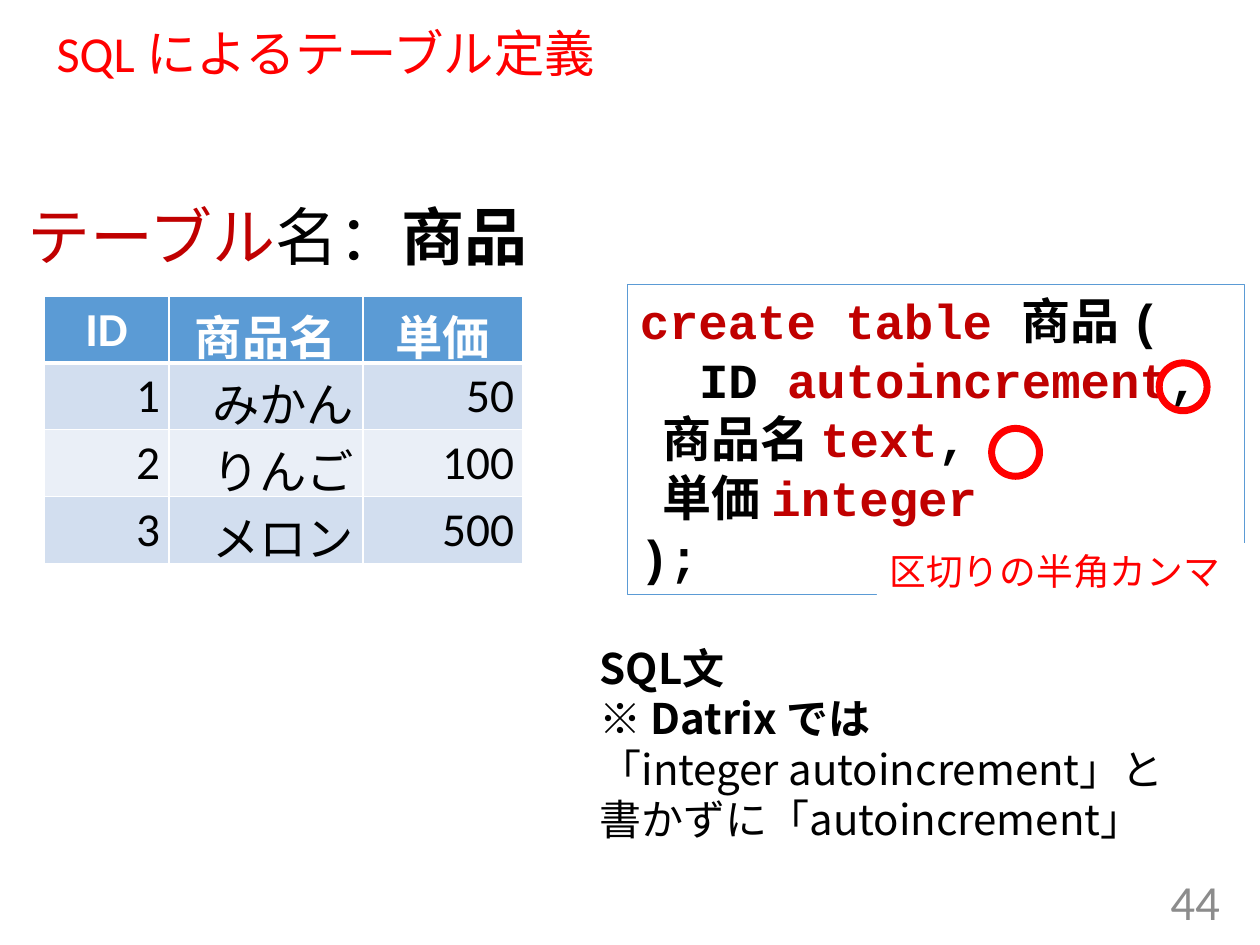
import pptx
import pptx.dml.color
import pptx.enum.shapes
import pptx.enum.text
import pptx.oxml
import pptx.oxml.ns
import pptx.util
from pptx.util import Inches

ALIGN = pptx.enum.text.PP_ALIGN
ANCHOR = pptx.enum.text.MSO_ANCHOR
SHAPE = pptx.enum.shapes.MSO_SHAPE
RED, KEYWORD, BLACK, WHITE = "FF0000", "C00000", "000000", "FFFFFF"
BLUE, BAND, PALE, GREY = "5B9BD5", "D2DEEF", "EAEFF7", "8C8C8C"
GOTHIC = "Noto Sans CJK JP"


def rgb(value):
    return pptx.dml.color.RGBColor.from_string(value)


class Deck:
    def __init__(self, width, height):
        self.prs = pptx.Presentation()
        self.prs.slide_width, self.prs.slide_height = Inches(width), Inches(height)
        self.s = self.prs.slides.add_slide(self.prs.slide_layouts[6])

    def run(self, p, text, size, font="Calibri", color=BLACK, bold=False):
        r = p.add_run()
        r.text = text
        r.font.size, r.font.name, r.font.bold = pptx.util.Pt(size), font, bold
        r.font.color.rgb = rgb(color)
        latin = r._r.rPr.find(pptx.oxml.ns.qn("a:latin"))
        ns = pptx.oxml.ns.nsdecls("a")
        latin.addnext(pptx.oxml.parse_xml(f'<a:ea {ns} typeface="{GOTHIC}"/>'))

    def add_lines(self, tf, lines, size, font="Calibri", align=ALIGN.LEFT, spacing=None,
                  indents=None, anchor=ANCHOR.TOP, wrap=True):
        """Fill a text frame with lines, each a list of (text, colour, bold) runs."""
        tf.word_wrap, tf.vertical_anchor = wrap, anchor
        for i, line in enumerate(lines):
            p = tf.add_paragraph() if i else tf.paragraphs[0]
            p.alignment = align
            if spacing:
                p.line_spacing = spacing
            if indents:
                pPr = p._p.get_or_add_pPr()
                pPr.set("marL", str(Inches(indents[i])))
                pPr.set("indent", "0")
            for text, color, bold in line:
                self.run(p, text, size, font, color, bold)

    def text(self, box, lines, size, **style):
        sp = self.s.shapes.add_textbox(*map(Inches, box))
        self.add_lines(sp.text_frame, lines, size, **style)

    def shape(self, kind, box, fill=None, line=None, width=0.75):
        sp = self.s.shapes.add_shape(kind, *map(Inches, box))
        sp.shadow.inherit = False
        if fill:
            sp.fill.solid()
            sp.fill.fore_color.rgb = rgb(fill)
        else:
            sp.fill.background()
        if line:
            sp.line.color.rgb = rgb(line)
            sp.line.width = pptx.util.Pt(width)
        else:
            sp.line.fill.background()
        return sp

    def borders(self, cell, bottom):
        tcPr = cell._tc.get_or_add_tcPr()
        ns = pptx.oxml.ns.nsdecls("a")
        for i, (side, width) in enumerate(zip("LRTB", (1, 1, 1, bottom))):
            tcPr.insert(i, pptx.oxml.parse_xml(
                f'<a:ln{side} {ns} w="{pptx.util.Pt(width)}"><a:solidFill>'
                f'<a:srgbClr val="{WHITE}"/></a:solidFill></a:ln{side}>'))

    def table(self, box, widths, rows, size):
        table = self.s.shapes.add_table(len(rows), len(widths), *map(Inches, box)).table
        for column, width in zip(table.columns, widths):
            column.width = Inches(width)
        for i, row in enumerate(rows):
            header = i == 0
            table.rows[i].height = Inches(0.53)
            for j, value in enumerate(row):
                cell = table.cell(i, j)
                cell.margin_left = cell.margin_right = Inches(0.07)
                cell.margin_top = cell.margin_bottom = Inches(0.04)
                cell.fill.solid()
                cell.fill.fore_color.rgb = rgb(BLUE if header else BAND if i % 2 else PALE)
                self.borders(cell, 3 if header else 1)
                self.add_lines(cell.text_frame,
                               [[(value, WHITE if header else BLACK, header)]], size,
                               align=ALIGN.CENTER if header else ALIGN.RIGHT)


def main():
    d = Deck(10, 7.5)
    d.text((0.35, 0.19, 9.25, 0.51), [[("SQL によるテーブル定義", RED, False)]], 28.8,
           spacing=0.9, anchor=ANCHOR.MIDDLE)
    d.text((7.53, 6.95, 2.25, 0.4), [[("44", GREY, False)]], 28,
           align=ALIGN.RIGHT, anchor=ANCHOR.MIDDLE)
    d.text((0.12, 1.59, 4.76, 0.76),
           [[("テーブル", KEYWORD, False), ("名：", BLACK, False), ("商品", BLACK, True)]],
           36, font=GOTHIC, spacing=0.9)
    d.table((0.35, 2.35, 3.8, 2.1), (0.99, 1.54, 1.27),
            [("ID", "商品名", "単価"), ("1", "みかん", "50"),
             ("2", "りんご", "100"), ("3", "メロン", "500")], 27)

    code = d.shape(SHAPE.RECTANGLE, (4.98, 2.26, 4.9, 2.46), line=BLUE)
    d.add_lines(code.text_frame, [
        [("create table ", KEYWORD, True), ("商品 (", BLACK, True)],
        [("ID ", BLACK, True), ("autoincrement", KEYWORD, True), (",", BLACK, True)],
        [("商品名 ", BLACK, True), ("text", KEYWORD, True), (",", BLACK, True)],
        [("単価 ", BLACK, True), ("integer", KEYWORD, True)],
        [(");", BLACK, True)],
    ], 28, font="Courier New", indents=(0, 0.47, 0.18, 0.18, 0))

    d.text((4.66, 5.05, 4.86, 1.72), [
        [("SQL文", BLACK, True)],
        [("※ ", BLACK, False), ("Datrix では", BLACK, True)],
        [("「integer autoincrement」と", BLACK, False)],
        [("書かずに「autoincrement」", BLACK, False)],
    ], 24, font=GOTHIC, wrap=False)

    note = d.shape(SHAPE.RECTANGLE, (6.96, 4.31, 3.04, 0.45), fill=WHITE)
    d.add_lines(note.text_frame, [[("区切りの半角カンマ", RED, False)]], 21)
    for left, top in ((7.87, 3.4), (9.2, 2.88)):
        d.shape(SHAPE.OVAL, (left, top, 0.38, 0.38), line=RED, width=4)
    d.prs.save("out.pptx")


if __name__ == "__main__":
    main()
